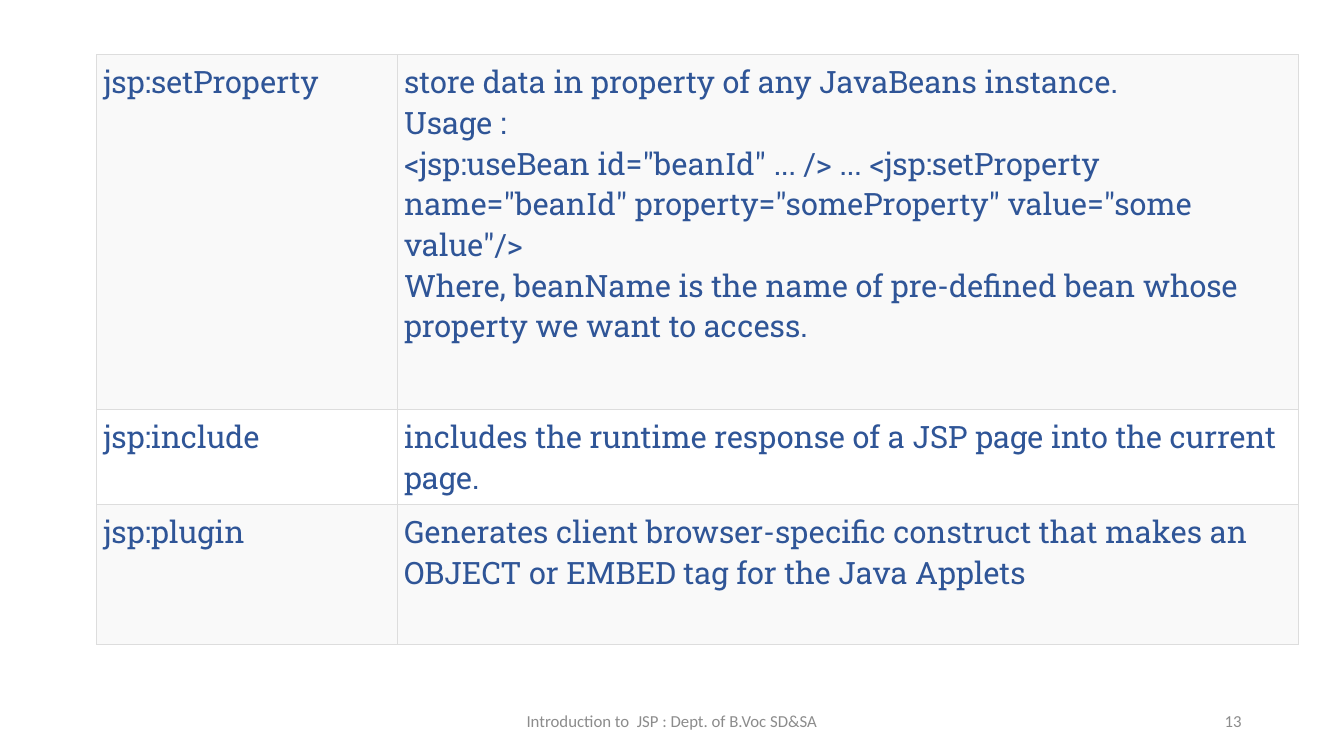
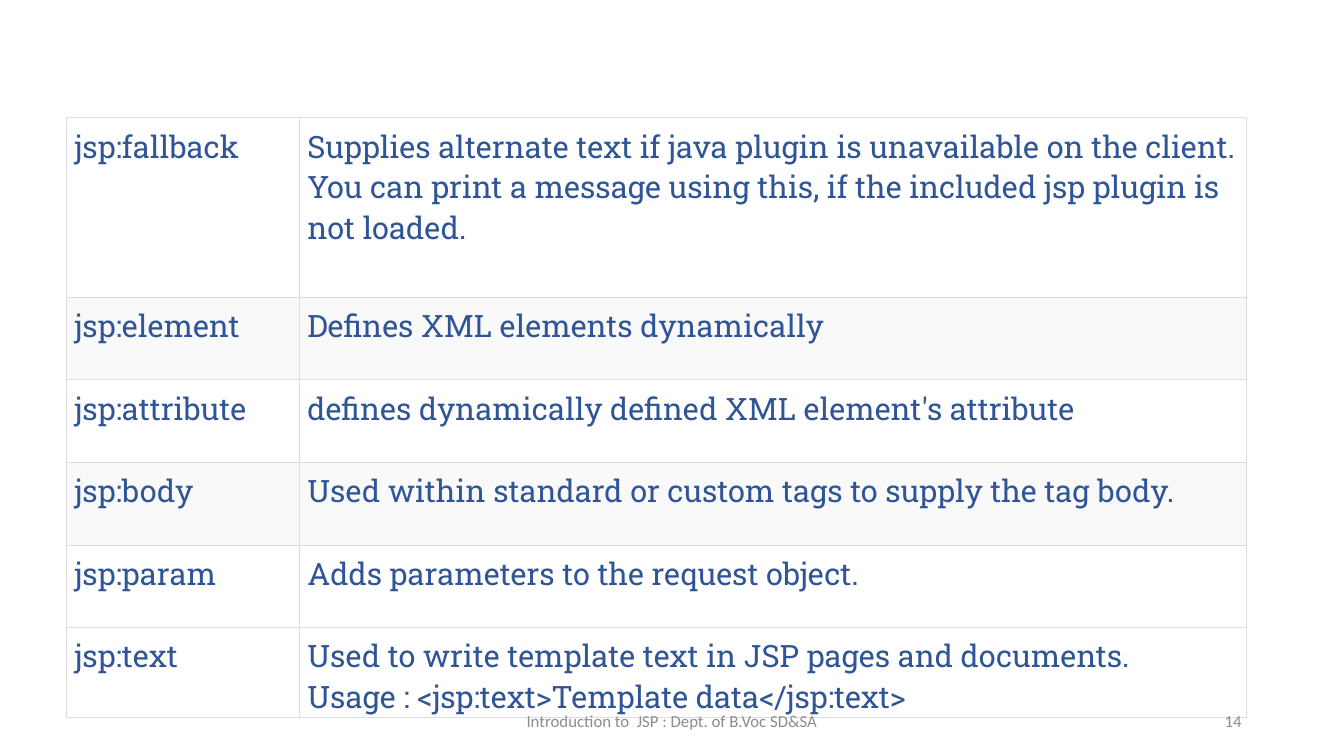
import pptx
import pptx.util
import pptx.dml.color
import pptx.enum.text
import lxml.etree
import pptx.oxml.ns

Pt = pptx.util.Pt
ALIGN = pptx.enum.text.PP_ALIGN
ANCHOR = pptx.enum.text.MSO_ANCHOR

COLORS = {
    "text": "2F5597",
    "footer": "8C8C8C",
    "border": "DDDDDD",
    "shaded": "F9F9F9",
    "plain": "FFFFFF",
}
BODY = {"font": "Roboto Slab", "size": 22, "color": "text"}
FOOTER = {"font": "Calibri", "size": 12, "color": "footer"}
FOOTER_TEXT = "Introduction to  JSP : Dept. of B.Voc SD&SA"

# Content: each row is fill, height, tag and the paragraphs that describe it
SLIDES = [
    {
        "number": 13, "left": 69, "top": 38.9, "columns": (214.6, 643.7), "inset": 5.04,
        "rows": [
            ("shaded", 253.4, "jsp:setProperty", [
                "store data in property of any JavaBeans instance.",
                "Usage :",
                '<jsp:useBean id="beanId" ... /> ... <jsp:setProperty name="beanId" '
                'property="someProperty" value="some value"/>',
                "Where, beanName is the name of pre-defined bean whose property we want to access.",
            ]),
            ("plain", 56.2, "jsp:include", [
                "includes the runtime response of a JSP page into the current page."]),
            ("shaded", 100, "jsp:plugin", [
                "Generates client browser-specific construct that makes an OBJECT or EMBED tag "
                "for the Java Applets"]),
        ],
    },
    {
        "number": 14, "left": 47.5, "top": 84.2, "columns": (166.3, 676.8), "inset": 5.76,
        "rows": [
            ("plain", 128.2, "jsp:fallback", [
                "Supplies alternate text if java plugin is unavailable on the client. You can "
                "print a message using this, if the included jsp plugin is not loaded."]),
            ("shaded", 59, "jsp:element", ["Defines XML elements dynamically"]),
            ("plain", 59, "jsp:attribute", ["defines dynamically defined XML element's attribute"]),
            ("shaded", 59, "jsp:body", [
                "Used within standard or custom tags to supply the tag body."]),
            ("plain", 59, "jsp:param", ["Adds parameters to the request object."]),
            ("plain", 59, "jsp:text", [
                "Used to write template text in JSP pages and documents.",
                "Usage : <jsp:text>Template data</jsp:text>",
            ]),
        ],
    },
]


def rgb(name):
    return pptx.dml.color.RGBColor.from_string(COLORS[name])


def write_text(frame, paragraphs, font, size, color, align=ALIGN.LEFT):
    for index, text in enumerate(paragraphs):
        paragraph = frame.add_paragraph() if index else frame.paragraphs[0]
        paragraph.alignment = align
        run = paragraph.add_run()
        run.text = text
        run.font.name = font
        run.font.size = Pt(size)
        run.font.color.rgb = rgb(color)


def add_borders(cell):
    properties = cell._tc.get_or_add_tcPr()
    qn = pptx.oxml.ns.qn
    for side in ("a:lnL", "a:lnR", "a:lnT", "a:lnB"):
        line = lxml.etree.SubElement(properties, qn(side), w=str(Pt(0.75)))
        fill = lxml.etree.SubElement(line, qn("a:solidFill"))
        lxml.etree.SubElement(fill, qn("a:srgbClr"), val=COLORS["border"])


def add_tag_table(slide, content):
    rows, columns = content["rows"], content["columns"]
    table = slide.shapes.add_table(
        len(rows), len(columns), Pt(content["left"]), Pt(content["top"]),
        Pt(sum(columns)), Pt(sum(row[1] for row in rows))).table
    table.first_row = table.horz_banding = False
    for column, width in zip(table.columns, columns):
        column.width = Pt(width)
    for row, (fill, height, tag, description) in zip(table.rows, rows):
        row.height = Pt(height)
        for cell, paragraphs in zip(row.cells, ([tag], description)):
            inset = Pt(content["inset"])
            cell.margin_left = cell.margin_right = inset
            cell.margin_top = cell.margin_bottom = inset
            add_borders(cell)
            cell.fill.solid()
            cell.fill.fore_color.rgb = rgb(fill)
            write_text(cell.text_frame, paragraphs, **BODY)


def add_footer(slide, number):
    for text, left, width, align in (
            (FOOTER_TEXT, 318, 324, ALIGN.CENTER),
            (str(number), 678, 216, ALIGN.RIGHT)):
        frame = slide.shapes.add_textbox(Pt(left), Pt(500.5), Pt(width), Pt(28.75)).text_frame
        frame.word_wrap = True
        frame.vertical_anchor = ANCHOR.MIDDLE
        write_text(frame, [text], align=align, **FOOTER)


def main():
    presentation = pptx.Presentation()
    presentation.slide_width = Pt(960)
    presentation.slide_height = Pt(540)
    blank_layout = presentation.slide_layouts[6]
    for content in SLIDES:
        slide = presentation.slides.add_slide(blank_layout)
        add_tag_table(slide, content)
        add_footer(slide, content["number"])
    presentation.save("out.pptx")


if __name__ == "__main__":
    main()
